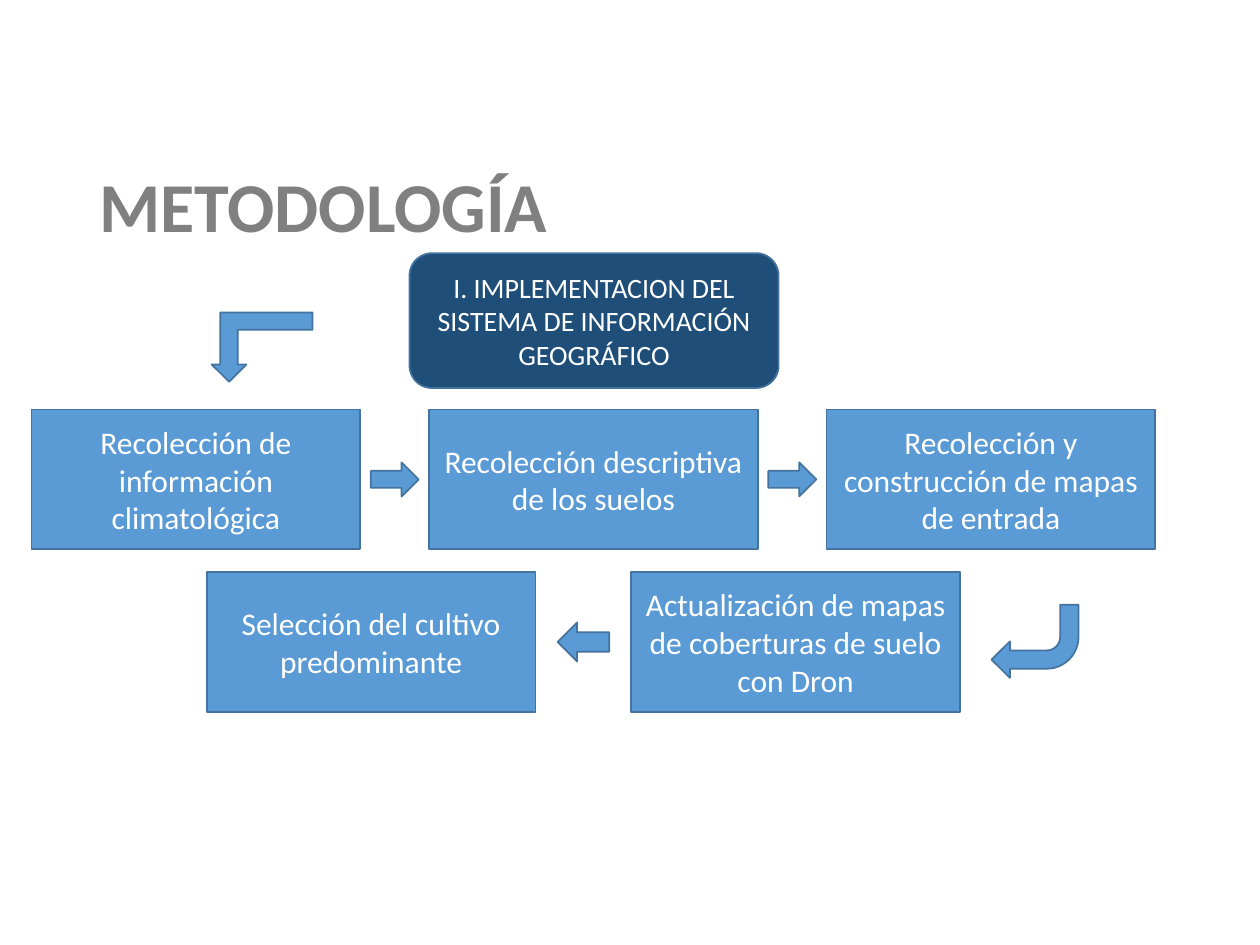
from pptx import Presentation
from pptx.dml.color import RGBColor
from pptx.enum.shapes import MSO_SHAPE
from pptx.enum.text import MSO_ANCHOR, MSO_AUTO_SIZE, PP_ALIGN
from pptx.util import Inches, Pt

RECTANGLE = MSO_SHAPE.RECTANGLE
ROUNDED = MSO_SHAPE.ROUNDED_RECTANGLE
RIGHT_ARROW = MSO_SHAPE.RIGHT_ARROW
LEFT_ARROW = MSO_SHAPE.LEFT_ARROW
BENT_ARROW = MSO_SHAPE.BENT_ARROW
BENT_UP_ARROW = MSO_SHAPE.BENT_UP_ARROW
CENTER, LEFT = PP_ALIGN.CENTER, PP_ALIGN.LEFT
MIDDLE = MSO_ANCHOR.MIDDLE
NO_AUTOFIT = MSO_AUTO_SIZE.NONE

COLORS = {"heading": "1F4E79", "step": "5B9BD5", "outline": "43739E",
          "title": "808080", "text": "FFFFFF"}
FONT = "Calibri"
TITLE_ONLY = 5
STEP_WIDTH, STEP_HEIGHT = 2.61, 1.11
MARGINS = {"margin_left": 0.07, "margin_right": 0.07,
           "margin_top": 0.04, "margin_bottom": 0.04}

COLLECTION_STEPS = ["Recolección de información climatológica",
                    "Recolección descriptiva de los suelos",
                    "Recolección y construcción de mapas de entrada"]
SELECTION_STEPS = ["Selección del cultivo predominante",
                   "Actualización de mapas de coberturas de suelo con Dron"]


def color(name):
    return RGBColor.from_string(COLORS[name])


def format_text(shape, text, size, color_name, alignment, bold=False):
    frame = shape.text_frame
    frame.text = text
    frame.word_wrap = True
    frame.auto_size = NO_AUTOFIT
    frame.vertical_anchor = MIDDLE
    paragraph = frame.paragraphs[0]
    paragraph.alignment = alignment
    font = paragraph.runs[0].font
    for name, value in {"name": FONT, "size": Pt(size), "bold": bold}.items():
        setattr(font, name, value)
    font.color.rgb = color(color_name)
    return paragraph


def add_figure(slide, kind, box, fill="step", rotation=0):
    shape = slide.shapes.add_shape(kind, *map(Inches, box))
    shape.shadow.inherit = False
    shape.rotation = rotation
    shape.fill.solid()
    shape.fill.fore_color.rgb = color(fill)
    shape.line.color.rgb = color("outline")
    shape.line.width = Pt(1)
    return shape


def add_label(slide, kind, box, text, size, fill="step"):
    shape = add_figure(slide, kind, box, fill)
    format_text(shape, text, size, "text", CENTER)
    for name, value in MARGINS.items():
        setattr(shape.text_frame, name, Inches(value))


def place_title(slide, box, text):
    title = slide.shapes.title
    for name, value in zip(("left", "top", "width", "height"), box):
        setattr(title, name, Inches(value))
    paragraph = format_text(title, text, 40, "title", LEFT, bold=True)
    paragraph.line_spacing = 0.9


def add_step_row(slide, box, texts, arrow_kind, arrow_size):
    """Spread equal steps across the box, with an arrow centred in each gap."""
    left, top, width, height = box
    arrow_width, arrow_height = arrow_size
    pitch = (width - STEP_WIDTH) / (len(texts) - 1)
    for column, text in enumerate(texts):
        step_left = left + column * pitch
        add_label(slide, RECTANGLE, (step_left, top, STEP_WIDTH, height), text, 18)
        if column:
            gap_center = step_left - (pitch - STEP_WIDTH) / 2
            add_figure(slide, arrow_kind,
                       (gap_center - arrow_width / 2,
                        top + (height - arrow_height) / 2,
                        arrow_width, arrow_height))


def main():
    presentation = Presentation()
    presentation.slide_width = Inches(10)
    presentation.slide_height = Inches(7.5)
    slide = presentation.slides.add_slide(presentation.slide_layouts[TITLE_ONLY])

    place_title(slide, (0.69, 1.1, 8.62, 1.13), "METODOLOGÍA")
    add_label(slide, ROUNDED, (3.25, 2.01, 2.93, 1.07),
              "I. IMPLEMENTACION DEL SISTEMA DE INFORMACIÓN GEOGRÁFICO",
              16, "heading")
    add_step_row(slide, (0.25, 3.25, 8.92, STEP_HEIGHT),
                 COLLECTION_STEPS, RIGHT_ARROW, (0.38, 0.27))
    add_step_row(slide, (1.64, 4.54, 5.98, STEP_HEIGHT),
                 SELECTION_STEPS, LEFT_ARROW, (0.41, 0.31))
    add_figure(slide, BENT_UP_ARROW, (1.68, 2.48, 0.8, 0.55), rotation=180)
    add_figure(slide, BENT_ARROW, (7.87, 4.8, 0.69, 0.58), rotation=180)

    presentation.save("out.pptx")


if __name__ == "__main__":
    main()
